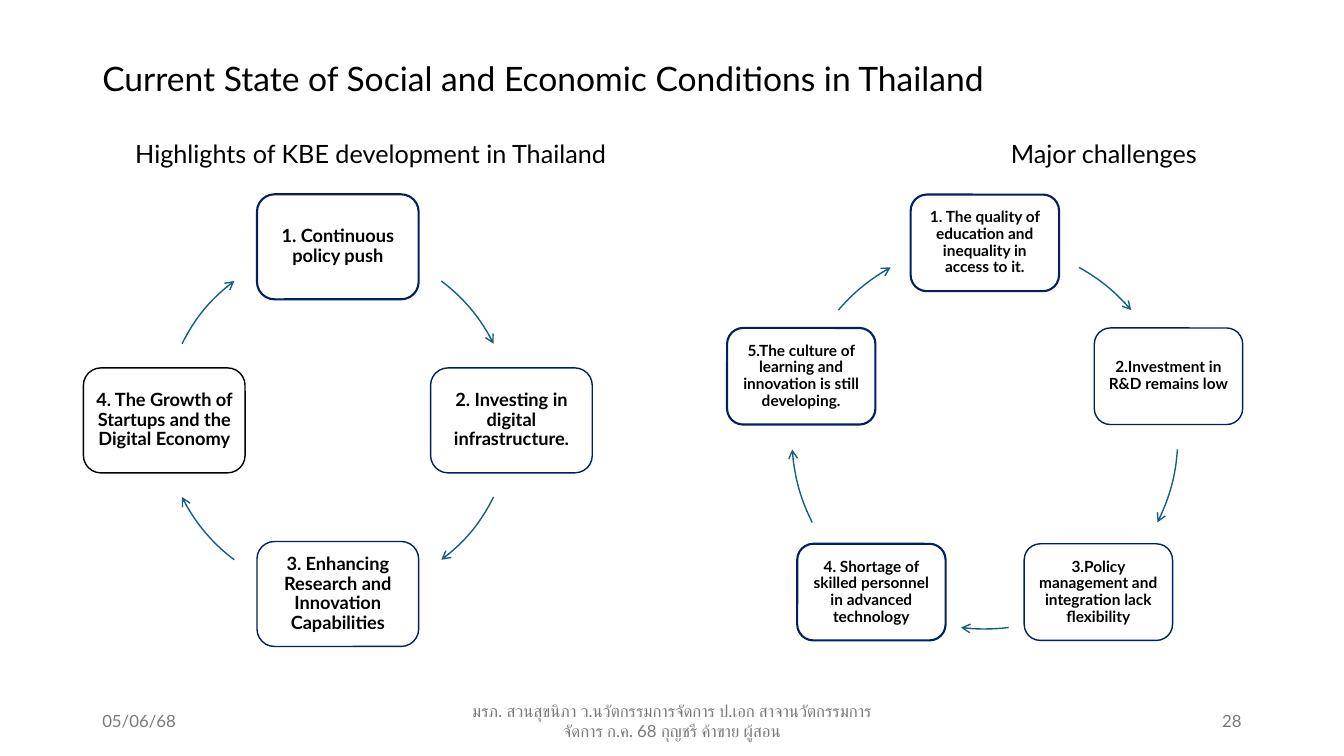
import math

from lxml import etree
from pptx import Presentation
from pptx import util as u
from pptx.dml.color import RGBColor
from pptx.enum import shapes, text
from pptx.oxml import ns

COLORS = {
    "ink": "000000",
    "paper": "FFFFFF",
    "navy": "002060",
    "teal": "156082",
    "gray": "797979",
}


class SlideBuilder:
    font = "Lato"
    node_margin = 3.6

    def __init__(self, slide):
        self.slide = slide

    def color(self, name):
        return RGBColor.from_string(COLORS[name])

    def fill_text(self, shape, wording, size, color="ink", align=text.PP_ALIGN.LEFT,
                  bold=False, spacing=0.9):
        frame = shape.text_frame
        frame.word_wrap = True
        frame.text = wording
        paragraph = frame.paragraphs[0]
        paragraph.alignment = align
        paragraph.line_spacing = spacing
        for run in paragraph.runs:
            run.font.name = self.font
            run.font.size = u.Pt(size)
            run.font.bold = bold
            run.font.color.rgb = self.color(color)
        return frame

    def label(self, wording, left, top, width, height, size,
              anchor=text.MSO_ANCHOR.MIDDLE, **style):
        box = self.slide.shapes.add_textbox(*map(u.Pt, (left, top, width, height)))
        self.fill_text(box, wording, size, **style).vertical_anchor = anchor

    def preset(self, kind, center_x, center_y, width, height, line_color, line_width):
        shape = self.slide.shapes.add_shape(
            kind, u.Pt(center_x - width / 2), u.Pt(center_y - height / 2),
            u.Pt(width), u.Pt(height))
        shape.shadow.inherit = False
        shape.line.color.rgb = self.color(line_color)
        shape.line.width = u.Pt(line_width)
        return shape

    def node(self, wording, center_x, center_y, width, height, size, line_color, line_width):
        shape = self.preset(shapes.MSO_SHAPE.ROUNDED_RECTANGLE, center_x, center_y,
                            width, height, line_color, line_width)
        shape.fill.solid()
        shape.fill.fore_color.rgb = self.color("paper")
        frame = self.fill_text(shape, wording, size, align=text.PP_ALIGN.CENTER, bold=True)
        frame.vertical_anchor = text.MSO_ANCHOR.MIDDLE
        frame.margin_left = frame.margin_right = u.Pt(self.node_margin)
        frame.margin_top = frame.margin_bottom = u.Pt(self.node_margin)

    def arc_arrow(self, center_x, center_y, radius, start, end):
        arc = self.preset(shapes.MSO_SHAPE.ARC, center_x, center_y,
                          2 * radius, 2 * radius, "teal", 1)
        arc.fill.background()
        for index, degrees in enumerate((start, end)):
            arc.adjustments[index] = degrees % 360 * 0.6
        outline = arc.element.spPr.find(ns.qn("a:ln"))
        etree.SubElement(outline, ns.qn("a:tailEnd"), type="arrow")

    def cycle(self, center_x, center_y, radius, node_size, text_size, nodes, arcs):
        step = 360 / len(nodes)
        for index, (wording, line_color, line_width) in enumerate(nodes):
            angle = math.radians(index * step - 90)
            self.node(wording, center_x + radius * math.cos(angle),
                      center_y + radius * math.sin(angle), *node_size,
                      text_size, line_color, line_width)
        for start, end in arcs:
            self.arc_arrow(center_x, center_y, radius, start, end)


HIGHLIGHTS = [
    ("1. Continuous policy push", "navy", 1.5),
    ("2. Investing in digital infrastructure.", "navy", 1),
    ("3. Enhancing Research and Innovation Capabilities", "navy", 1),
    ("4. The Growth of Startups and the Digital Economy", "ink", 1),
]
HIGHLIGHT_ARCS = [(-53.4, -26.2), (26.2, 53.4), (126.6, 153.8), (206.2, 233.4)]

CHALLENGES = [
    ("1. The quality of education and inequality in access to it.", "navy", 1.5),
    ("2.Investment in R&D remains low", "navy", 1),
    ("3.Policy management and integration lack flexibility", "navy", 1),
    ("4. Shortage of skilled personnel in advanced technology", "navy", 1.5),
    ("5.The culture of learning and innovation is still developing.", "navy", 1.5),
]
CHALLENGE_ARCS = [(-60.8, -40.7), (4, 26.6), (82.9, 97.1), (153.4, 176), (220.7, 240.8)]

FOOTERS = [
    ("05/06/68", 66, 216, text.PP_ALIGN.LEFT),
    ("มรภ. สวนสุขนิภา ว.นวัตกรรมการจัดการ ป.เอก สาจานวัตกรรมการจัดการ ก.ค. 68 กุญชรี ค้าขาย ผู้สอน",
     318, 324, text.PP_ALIGN.CENTER),
    ("28", 678, 216, text.PP_ALIGN.RIGHT),
]


def main():
    presentation = Presentation()
    presentation.slide_width = u.Pt(960)
    presentation.slide_height = u.Pt(540)
    builder = SlideBuilder(presentation.slides.add_slide(presentation.slide_layouts[6]))

    builder.label("Current State of Social and Economic Conditions in Thailand",
                  66, 28.8, 828, 57, 24)
    for heading, left, width in (("Highlights of KBE development in Thailand", 89.5, 400),
                                 ("Major challenges", 715, 179)):
        builder.label(heading, left, 98, width, 28, 18, anchor=text.MSO_ANCHOR.TOP)

    builder.cycle(241.3, 300.3, 124, (115.5, 75), 13, HIGHLIGHTS, HIGHLIGHT_ARCS)
    builder.cycle(703.5, 311.4, 137.9, (106, 69), 11, CHALLENGES, CHALLENGE_ARCS)

    for wording, left, width, align in FOOTERS:
        builder.label(wording, left, 500.5, width, 28.8, 12, color="gray",
                      align=align, spacing=1)
    presentation.save("out.pptx")


if __name__ == "__main__":
    main()
